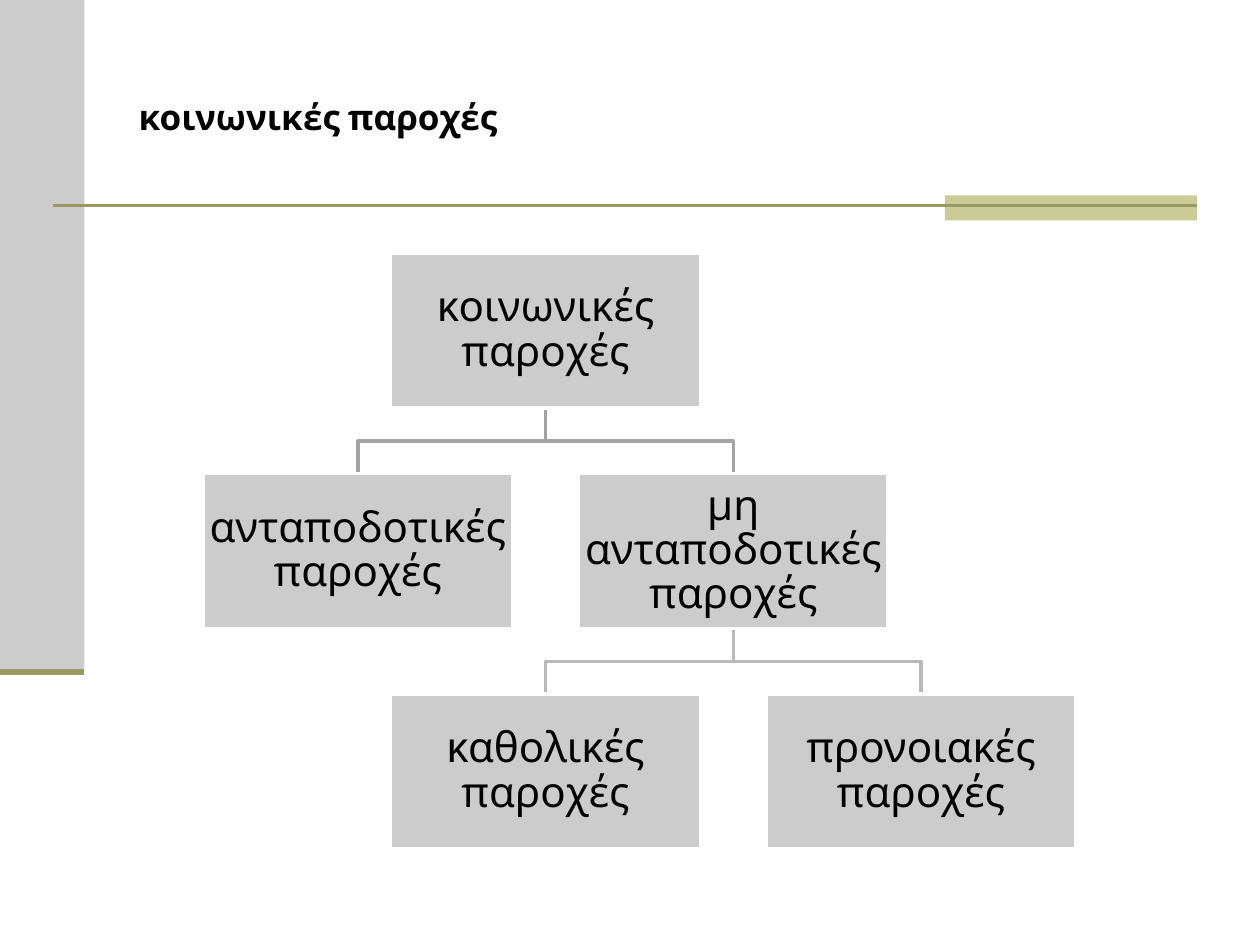
from pptx import Presentation
from pptx.dml.color import RGBColor
from pptx.enum.shapes import MSO_CONNECTOR, MSO_SHAPE
from pptx.enum.text import MSO_ANCHOR, PP_ALIGN
from pptx.oxml.ns import qn
from pptx.util import Inches, Pt
from lxml.etree import SubElement

THEME = {
    "font": "Cabin", "title_size": Pt(20), "box_size": Pt(24),
    "text": RGBColor.from_string("000000"),
    "grey": RGBColor.from_string("CCCCCC"),
    "white": RGBColor.from_string("FFFFFF"),
    "sand": RGBColor.from_string("CCCC99"),
    "olive": RGBColor.from_string("999966"),
    "branches": [RGBColor.from_string("A3A3A3"), RGBColor.from_string("B9B9B9")],
}

# Tree grid: column centres and row tops, in inches
COLUMNS = [2.84 + 1.49 * column for column in range(4)]
ROWS = [2.01 + 1.75 * row for row in range(3)]
BOX_WIDTH, BOX_HEIGHT, GAP = 2.46, 1.23, 0.52

# Text paragraphs, column, row
BOXES = [
    (["κοινωνικές παροχές"], 1, 0),
    (["ανταποδοτικές παροχές"], 0, 1),
    (["μη ανταποδοτικές", "παροχές"], 2, 1),
    (["καθολικές", "παροχές"], 1, 2),
    (["προνοιακές παροχές"], 3, 2),
]
# Parent column, child column, parent row
BRANCHES = [(2, 3, 1), (2, 1, 1), (1, 2, 0), (1, 0, 0)]


def add_rectangle(left, top, width, height, color):
    shape = slide.shapes.add_shape(
        MSO_SHAPE.RECTANGLE, Inches(left), Inches(top), Inches(width), Inches(height))
    shape.shadow.inherit = False
    shape.fill.solid()
    shape.fill.fore_color.rgb = color
    shape.line.fill.background()
    return shape


def format_text(paragraph, size, alignment, bold=False):
    paragraph.alignment = alignment
    values = {"name": THEME["font"], "size": size, "bold": bold}
    for name, value in values.items():
        setattr(paragraph.font, name, value)
    paragraph.font.color.rgb = THEME["text"]


presentation = Presentation()
presentation.slide_width, presentation.slide_height = Inches(10), Inches(7.5)
slide = presentation.slides.add_slide(presentation.slide_layouts[5])

# Side band and accent bar
add_rectangle(0, 0, 0.67, 5.33, THEME["grey"])
add_rectangle(7.5, 1.55, 2, 0.2, THEME["sand"])

# Rules: start, end, height, weight
for start, end, height, weight in [(0.42, 9.5, 1.63, 1.5), (0, 0.67, 5.33, 3.5)]:
    rule = slide.shapes.add_connector(
        MSO_CONNECTOR.STRAIGHT, Inches(start), Inches(height), Inches(end), Inches(height))
    rule.line.color.rgb = THEME["olive"]
    rule.line.width = Pt(weight)
    SubElement(rule._element.spPr, qn("a:effectLst"))

# Title
title = slide.shapes.title
frame = {"left": 1, "top": 0.3, "width": 8.5, "height": 1.25}
for name, value in frame.items():
    setattr(title, name, Inches(value))
title.text_frame.text = "κοινωνικές παροχές"
title.text_frame.vertical_anchor = MSO_ANCHOR.MIDDLE
format_text(title.text_frame.paragraphs[0], THEME["title_size"], PP_ALIGN.LEFT, bold=True)

# Branches of the tree
for parent, child, row in BRANCHES:
    top = ROWS[row] + BOX_HEIGHT
    middle, bottom = top + GAP / 2, top + GAP
    builder = slide.shapes.build_freeform(Inches(COLUMNS[parent]), Inches(top))
    corners = [(parent, middle), (child, middle), (child, bottom)]
    builder.add_line_segments(
        [(Inches(COLUMNS[column]), Inches(y)) for column, y in corners], close=False)
    branch = builder.convert_to_shape()
    branch.shadow.inherit = False
    branch.fill.background()
    branch.line.color.rgb = THEME["branches"][row]
    branch.line.width = Pt(2)

# Boxes of the tree
for texts, column, row in BOXES:
    box = add_rectangle(
        COLUMNS[column] - BOX_WIDTH / 2, ROWS[row], BOX_WIDTH, BOX_HEIGHT, THEME["grey"])
    box.line.color.rgb = THEME["white"]
    box.line.width = Pt(2)
    text_frame = box.text_frame
    text_frame.text = "\n".join(texts)
    text_frame.word_wrap = True
    text_frame.vertical_anchor = MSO_ANCHOR.MIDDLE
    for side in ("left", "top", "right", "bottom"):
        setattr(text_frame, f"margin_{side}", Inches(0.02))
    for paragraph in text_frame.paragraphs:
        format_text(paragraph, THEME["box_size"], PP_ALIGN.CENTER)
        paragraph.line_spacing = 0.88

presentation.save("out.pptx")
